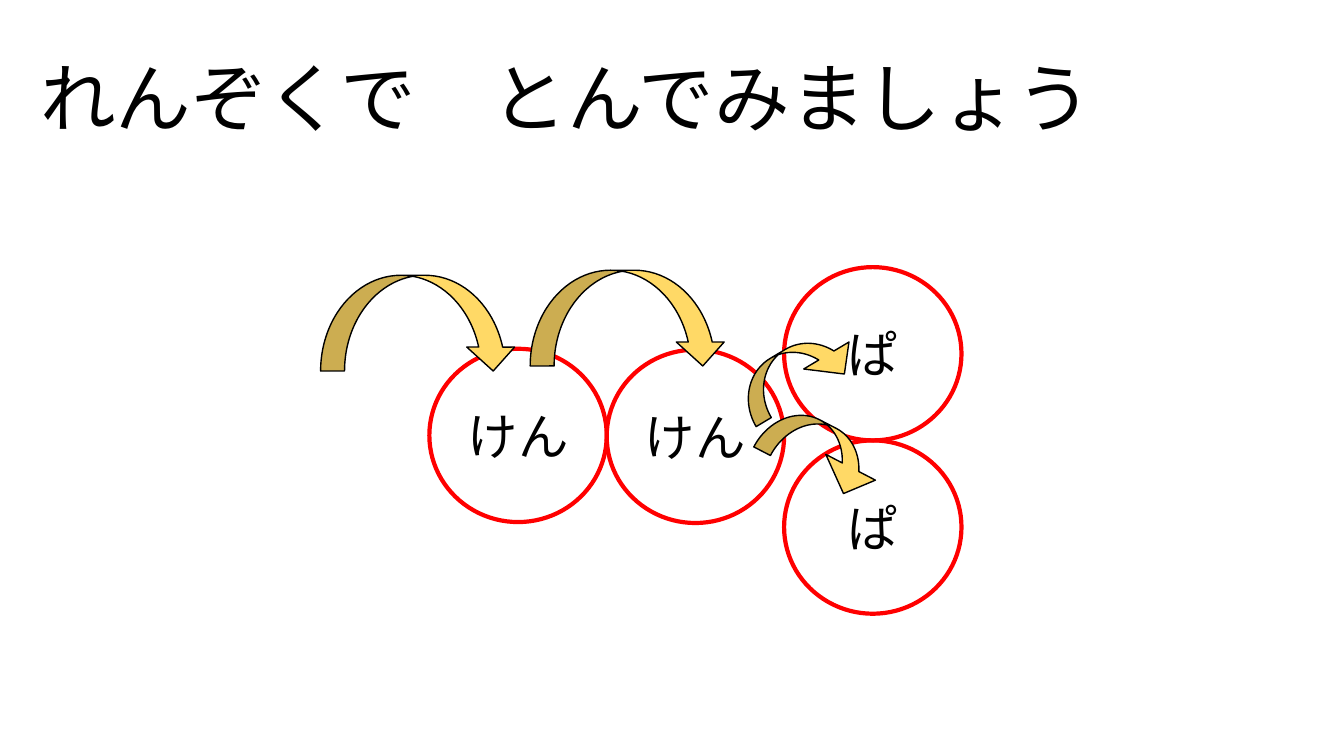
"""Build a slide that shows a hopping sequence through four hoops."""
from lxml import etree
from pptx import Presentation
from pptx.dml.color import RGBColor
from pptx.enum.shapes import MSO_SHAPE
from pptx.enum.text import MSO_ANCHOR, PP_ALIGN
from pptx.oxml.ns import qn
from pptx.util import Pt

OVAL = MSO_SHAPE.OVAL
CURVED_ARROW = MSO_SHAPE.CURVED_DOWN_ARROW
MIDDLE = MSO_ANCHOR.MIDDLE
CENTER = PP_ALIGN.CENTER
FONT = "Noto Sans CJK JP"
BLACK = RGBColor(0x00, 0x00, 0x00)
RED = RGBColor(0xFF, 0x00, 0x00)
GOLD = RGBColor(0xFF, 0xD9, 0x66)


def add_text(shape, text, size):
    tf = shape.text_frame
    tf.word_wrap = True
    tf.vertical_anchor = MIDDLE
    p = tf.paragraphs[0]
    r = p.add_run()
    r.text = text
    r.font.size = Pt(size)
    r.font.color.rgb = BLACK
    r.font.name = FONT
    etree.SubElement(r.font._element, qn("a:ea"), typeface=FONT)
    return p


prs = Presentation()
prs.slide_width = Pt(960)
prs.slide_height = Pt(540)
s = prs.slides.add_slide(prs.slide_layouts[6])

hoop_left, hoop_w, hoop_h = 306.7, 126.7, 123.8
hoops = [
    ("けん", 1, 249.8),
    ("ぱ", 2, 190.8),
    ("ぱ", 2, 190.8 + hoop_h),
    ("けん", 0, 249.1),
]
for text, column, top in hoops:
    sp = s.shapes.add_shape(OVAL, Pt(hoop_left + column * hoop_w), Pt(top),
                            Pt(hoop_w), Pt(hoop_h))
    sp.shadow.inherit = False
    sp.fill.background()
    sp.line.color.rgb = RED
    sp.line.width = Pt(3)
    p = add_text(sp, text, 36)
    p.alignment = CENTER

title = s.shapes.add_textbox(Pt(21.6), Pt(20.2), Pt(832.3), Pt(105.1))
p = add_text(title, "れんぞくで　とんでみましょう", 54)
p.line_spacing = 0.9

wide = (0.25, 0.5, 0.25)
tight = (0.344, 1.027, 0.489)
hops = [
    (229, 196.6, 140.4, 68.4, 0, wide),
    (378.7, 193, 140.4, 68.4, 0, wide),
    (524.2, 247, 92.2, 36.7, 329.2, tight),
    (542.2, 303.8, 92.2, 38.9, 27.5, tight),
]
for left, top, width, height, angle, adjustments in hops:
    sp = s.shapes.add_shape(CURVED_ARROW, Pt(left), Pt(top), Pt(width), Pt(height))
    sp.shadow.inherit = False
    sp.rotation = angle
    for i, value in enumerate(adjustments):
        sp.adjustments[i] = value
    sp.fill.solid()
    sp.fill.fore_color.rgb = GOLD
    sp.line.color.rgb = BLACK
    sp.line.width = Pt(1)

prs.save("out.pptx")
